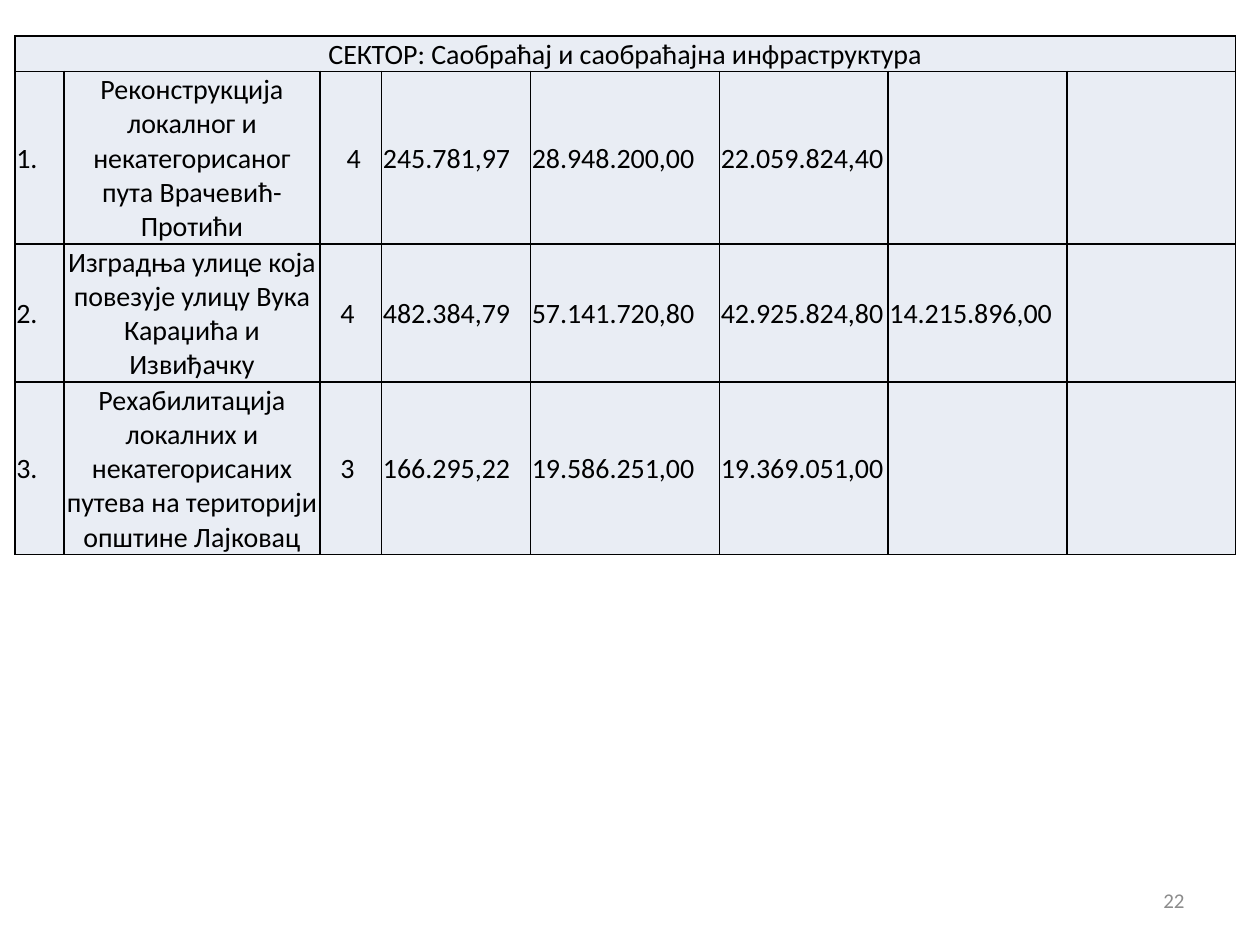
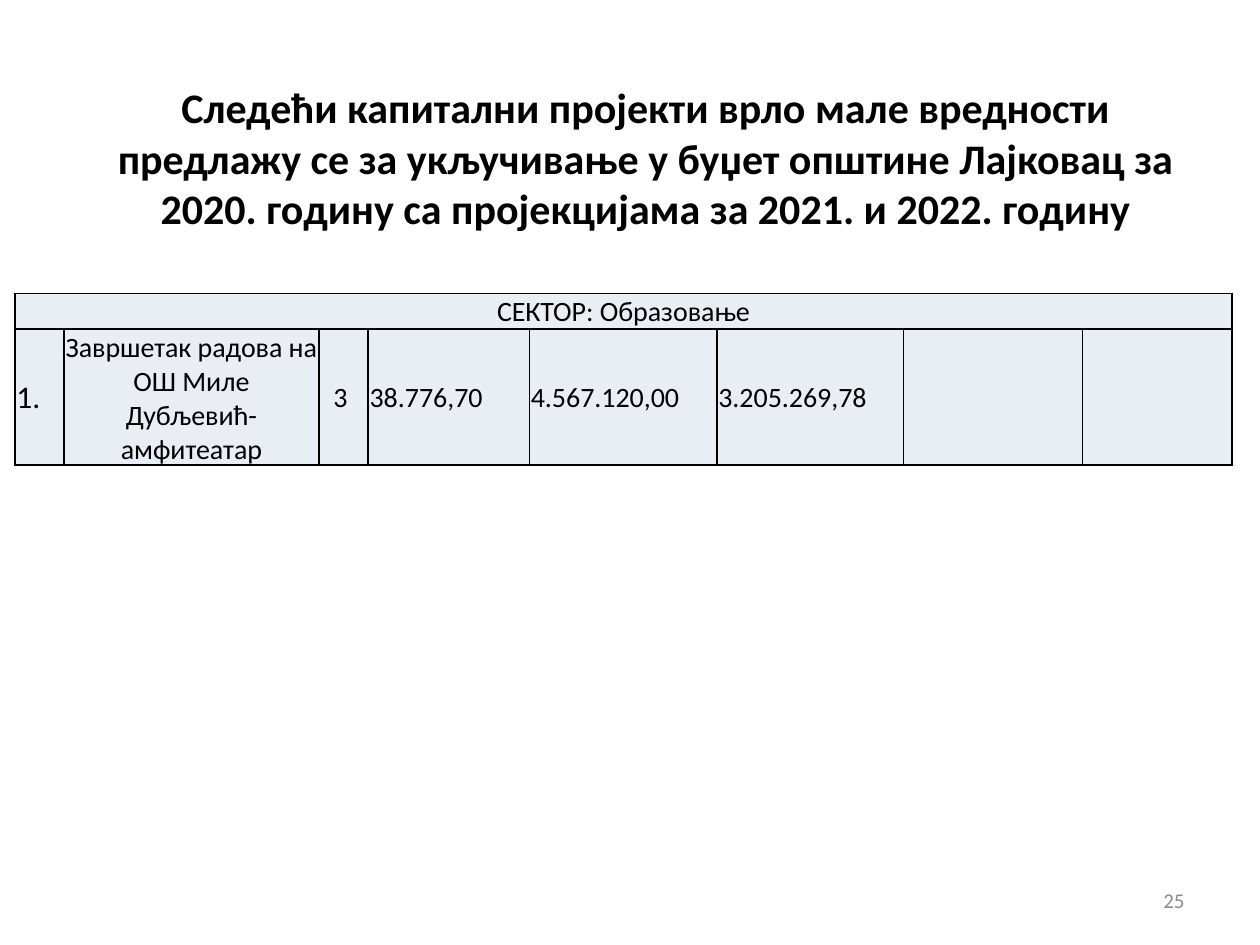
from lxml import etree
from pptx import Presentation
from pptx.dml.color import RGBColor
from pptx.enum import text
from pptx.oxml import ns
from pptx.util import Cm, Pt

INK = {"text": "000000", "line": "000000", "cell": "E9EDF4", "page": "8C8C8C"}
FONT = "Calibri"
LEFT, CENTER, RIGHT = (text.PP_ALIGN.LEFT, text.PP_ALIGN.CENTER,
                       text.PP_ALIGN.RIGHT)
MIDDLE, TOP = text.MSO_ANCHOR.MIDDLE, text.MSO_ANCHOR.TOP

# Each project: number, name, score, indent of the score in cm, amounts
ROADS = [
    ("1.", "Реконструкција локалног и некатегорисаног пута Врачевић-Протићи",
     "4", 0.51, ["245.781,97", "28.948.200,00", "22.059.824,40"]),
    ("2.", "Изградња улице која повезује улицу Вука Караџића и Извиђачку",
     "4", 0.38, ["482.384,79", "57.141.720,80", "42.925.824,80",
                 "14.215.896,00"]),
    ("3.", "Рехабилитација локалних и некатегорисаних путева на територији "
     "општине Лајковац",
     "3", 0.38, ["166.295,22", "19.586.251,00", "19.369.051,00"]),
]
SCHOOL = [
    ("1.", "Завршетак радова на ОШ Миле Дубљевић-амфитеатар",
     "3", 0.26, ["38.776,70", "4.567.120,00", "3.205.269,78"]),
]


def write(frame, words, size=16, color="text", align=LEFT, bold=False,
          indent=0):
    """Put one formatted paragraph into a text frame."""
    para = frame.paragraphs[0]
    para.alignment = align
    if indent:
        para._p.get_or_add_pPr().set("marL", str(Cm(indent)))
    run = para.add_run()
    run.text = words
    font = run.font
    font.name, font.size, font.bold = FONT, Pt(size), bold
    font.color.rgb = RGBColor.from_string(INK[color])


def edge(cell):
    """Draw thin lines on all four sides, ahead of the cell's fill."""
    props = cell._tc.get_or_add_tcPr()
    for spot, side in enumerate(("lnL", "lnR", "lnT", "lnB")):
        line = etree.Element(ns.qn("a:" + side), w=str(Pt(1)))
        fill = etree.SubElement(line, ns.qn("a:solidFill"))
        etree.SubElement(fill, ns.qn("a:srgbClr"), val=INK["line"])
        props.insert(spot, line)


def dress(cell):
    """Give a cell its fill, margins and lines."""
    cell.fill.solid()
    cell.fill.fore_color.rgb = RGBColor.from_string(INK["cell"])
    cell.margin_left = cell.margin_right = cell.margin_top = Cm(0.03)
    cell.margin_bottom = 0
    cell.vertical_anchor = MIDDLE
    edge(cell)


def sector(slide, top, name, jobs, widths, heights, mark=16):
    """Add the table of one sector's projects."""
    heights = [0.71] + heights
    grid = slide.shapes.add_table(
        len(heights), len(widths), Cm(0.3), Cm(top),
        Cm(sum(widths)), Cm(sum(heights))).table
    grid.first_row = grid.horz_banding = False
    for col, width in zip(grid.columns, widths):
        col.width = Cm(width)
    for row, height in zip(grid.rows, heights):
        row.height = Cm(height)
    for cell in grid.iter_cells():
        dress(cell)

    # Sector heading across all columns
    head = grid.cell(0, 0)
    head.merge(grid.cell(0, len(widths) - 1))
    write(head.text_frame, "СЕКТОР: " + name, align=CENTER)

    # Project rows
    for row, (num, job, score, indent, sums) in enumerate(jobs, 1):
        write(grid.cell(row, 0).text_frame, num, size=mark)
        write(grid.cell(row, 1).text_frame, job, align=CENTER)
        write(grid.cell(row, 2).text_frame, score, indent=indent)
        for col, amount in enumerate(sums, 3):
            write(grid.cell(row, col).text_frame, amount)


def title(slide, words):
    """Place and fill the title."""
    shape = slide.shapes.title
    shape.left, shape.top = Cm(1.9), Cm(1.52)
    shape.width, shape.height = Cm(22.23), Cm(3.33)
    shape.text_frame.vertical_anchor = TOP
    write(shape.text_frame, words, size=24, align=CENTER, bold=True)


def page(slide, num):
    """Add the page number at the lower right."""
    box = slide.shapes.add_textbox(Cm(18.2), Cm(17.65), Cm(5.93), Cm(1.01))
    box.text_frame.word_wrap = True
    box.text_frame.vertical_anchor = MIDDLE
    write(box.text_frame, str(num), size=12, color="page", align=RIGHT)


def main():
    deck = Presentation()
    deck.slide_width, deck.slide_height = Cm(25.4), Cm(19.05)
    bare, titled = deck.slide_layouts[6], deck.slide_layouts[5]

    # Transport projects
    slide = deck.slides.add_slide(bare)
    page(slide, 22)
    sector(slide, 0.73, "Саобраћај и саобраћајна инфраструктура", ROADS,
           [0.99, 5.16, 1.24, 3, 3.81, 3.4, 3.61, 3.4], [3.48, 2.78, 3.48])

    # Small projects in education
    slide = deck.slides.add_slide(titled)
    page(slide, 25)
    title(slide, "Следећи капитални пројекти врло мале вредности предлажу се "
          "за укључивање у буџет општине Лајковац за 2020. годину са "
          "пројекцијама за 2021. и 2022. годину")
    sector(slide, 5.92, "Образовање", SCHOOL,
           [0.99, 5.14, 0.99, 3.25, 3.78, 3.76, 3.61, 3.02], [2.74], mark=18)

    deck.save("out.pptx")


if __name__ == "__main__":
    main()
